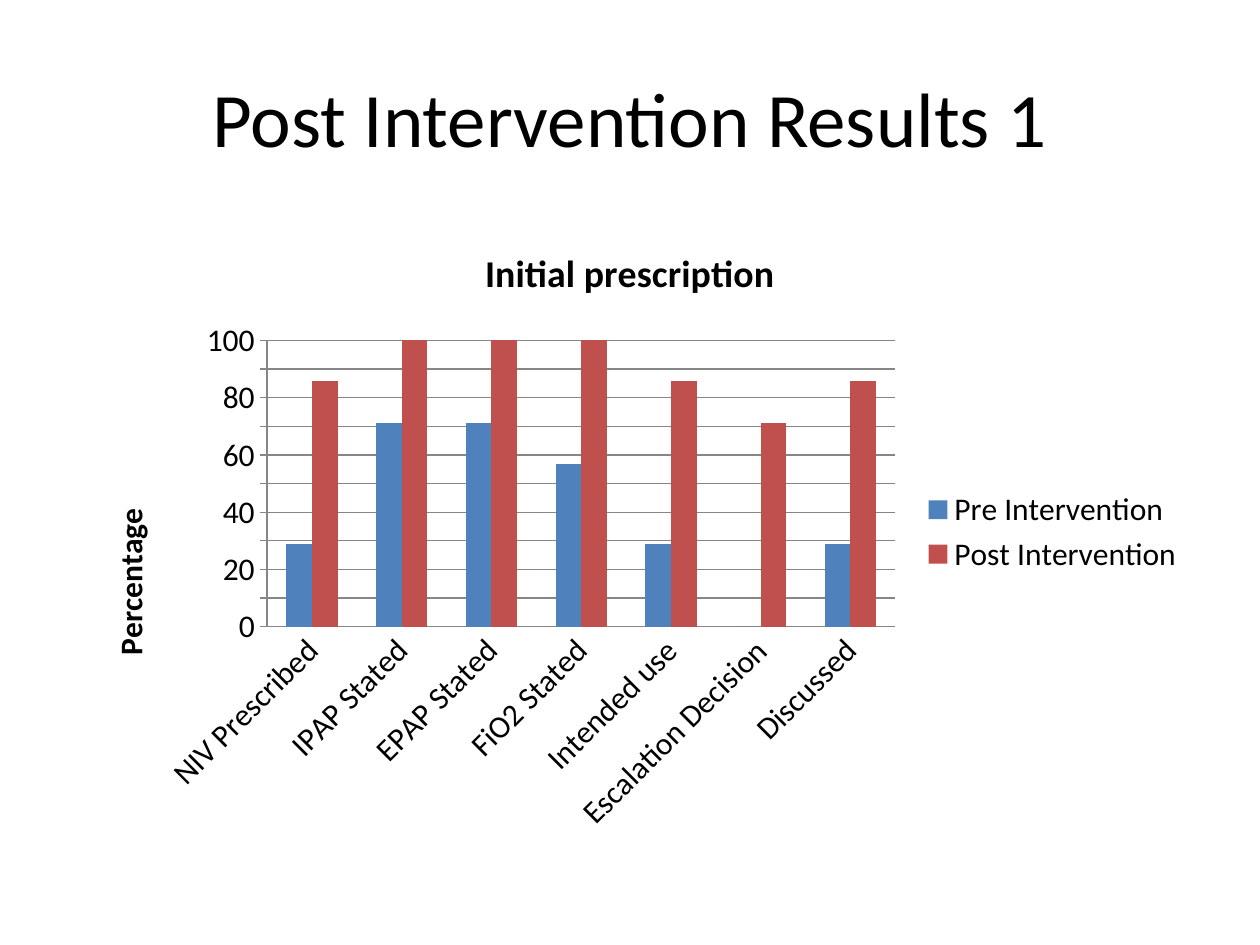
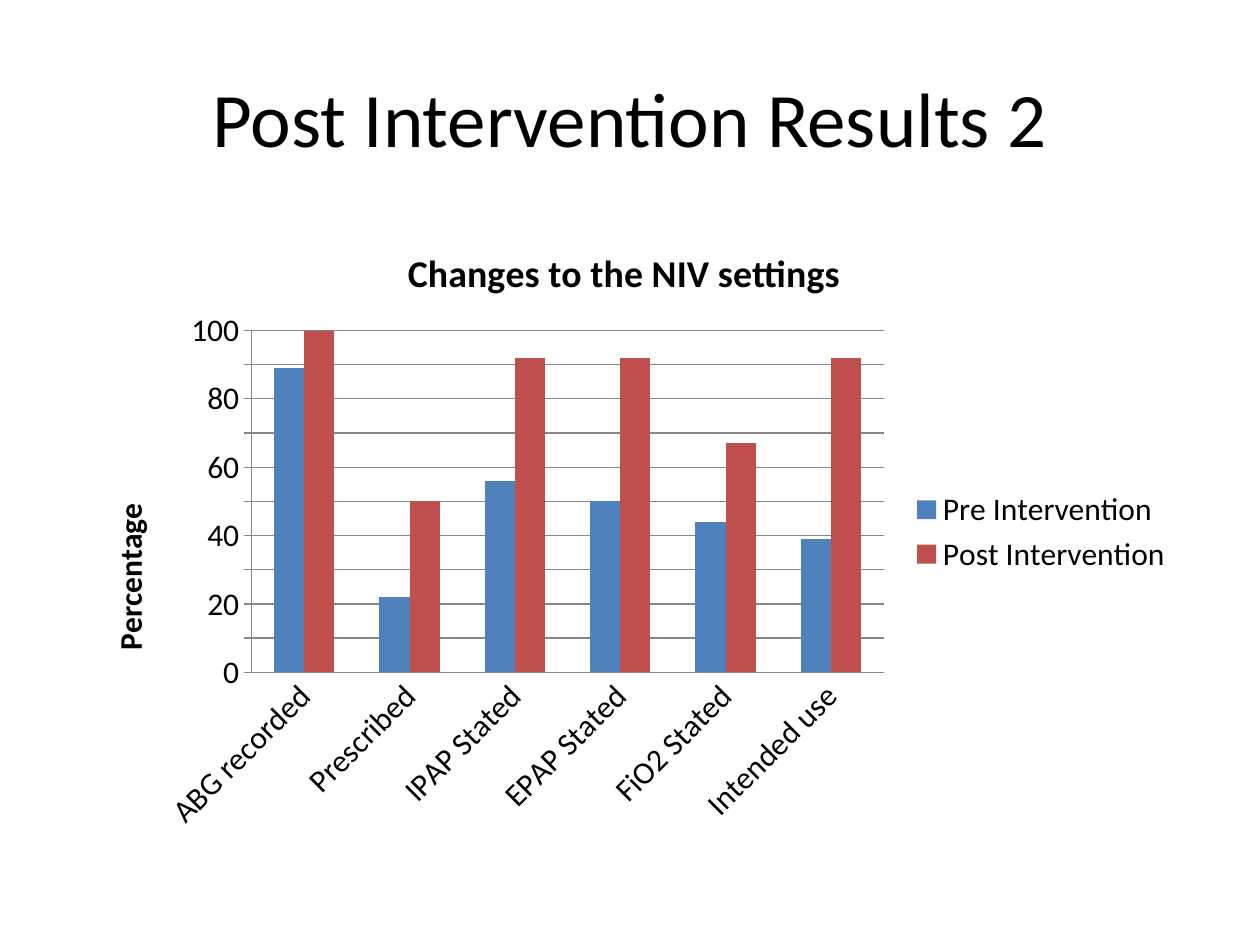
from dataclasses import dataclass

from lxml import etree
from pptx import Presentation
from pptx.chart.data import CategoryChartData
from pptx.dml.color import RGBColor
from pptx.enum.chart import XL_CHART_TYPE, XL_LEGEND_POSITION, XL_TICK_MARK
from pptx.enum.text import MSO_ANCHOR, PP_ALIGN
from pptx.oxml.ns import qn
from pptx.util import Inches, Pt

COLUMNS = XL_CHART_TYPE.COLUMN_CLUSTERED
RIGHT = XL_LEGEND_POSITION.RIGHT
NO_TICK, CROSS_TICK = XL_TICK_MARK.NONE, XL_TICK_MARK.CROSS
MIDDLE, CENTER = MSO_ANCHOR.MIDDLE, PP_ALIGN.CENTER
BLANK = 6


@dataclass(frozen=True)
class Theme:
    """Colours, font and type sizes of the deck."""
    font: str = "Calibri"
    ink: RGBColor = RGBColor(0x00, 0x00, 0x00)
    line: RGBColor = RGBColor(0x86, 0x86, 0x86)
    pre: RGBColor = RGBColor(0x4F, 0x81, 0xBD)
    post: RGBColor = RGBColor(0xC0, 0x50, 0x4D)
    title: float = 44
    chart_title: float = 21.6
    body: float = 18


THEME = Theme()
WIDTH, HEIGHT = Inches(10), Inches(7.5)
MARGIN = 0.05
TITLE_BOX = (MARGIN, 0.04, 0.9, 0.167)
CHART_TOP, CHART_HEIGHT = 0.233, 0.66

RESULTS = [
    dict(title="Post Intervention Results 1",
         chart_title="Initial prescription",
         cats=["NIV Prescribed", "IPAP Stated", "EPAP Stated", "FiO2 Stated",
               "Intended use", "Escalation Decision", "Discussed"],
         pre=[29, 71, 71, 57, 29, 0, 29],
         post=[86, 100, 100, 100, 86, 71, 86],
         width=0.9, plot=(0.18, 0.193, 0.554, 0.459), label=(0.035, 0.453)),
    dict(title="Post Intervention Results 2",
         chart_title="Changes to the NIV settings",
         cats=["ABG recorded", "Prescribed", "IPAP Stated", "EPAP Stated",
               "FiO2 Stated", "Intended use"],
         pre=[89, 22, 56, 50, 44, 39],
         post=[100, 50, 92, 92, 67, 92],
         width=0.891, plot=(0.168, 0.177, 0.563, 0.548), label=(0.035, 0.445)),
]


def place(box):
    """Turn shares of the slide into lengths."""
    return [round(share * side) for share, side in zip(box, (WIDTH, HEIGHT) * 2)]


def style(font, size, bold=False):
    """Apply the deck's typeface and ink."""
    font.name, font.size, font.bold = THEME.font, Pt(size), bold
    font.color.rgb = THEME.ink


def set_layout(parent, index, box, inner=False):
    """Fix a chart part at shares of the chart's size."""
    for old in parent.findall(qn("c:layout")):
        parent.remove(old)
    layout = etree.Element(qn("c:layout"))
    manual = etree.SubElement(layout, qn("c:manualLayout"))
    rules = [("layoutTarget", "inner")] if inner else []
    rules += [("xMode", "edge"), ("yMode", "edge"), *zip("xywh", box)]
    for tag, val in rules:
        etree.SubElement(manual, qn(f"c:{tag}"), val=str(val))
    parent.insert(index, layout)


def add_heading(title_text, shape):
    """Write a bold heading into a chart or axis title."""
    size, text = title_text
    tf = shape.text_frame
    tf.text = text
    style(tf.paragraphs[0].font, size, True)


def add_title(slide, text, box):
    """Add the centred slide title."""
    tf = slide.shapes.add_textbox(*place(box)).text_frame
    tf.word_wrap, tf.vertical_anchor = True, MIDDLE
    p = tf.paragraphs[0]
    p.text, p.alignment = text, CENTER
    style(p.font, THEME.title)


def style_axes(chart, label):
    """Format both axes, the gridlines and the value title."""
    cat, val = chart.category_axis, chart.value_axis
    cat.major_tick_mark, val.major_tick_mark = NO_TICK, CROSS_TICK
    val.minimum_scale, val.maximum_scale, val.major_unit = 0, 100, 10
    val.has_major_gridlines = True
    for part in (cat, val, val.major_gridlines):
        part.format.line.color.rgb = THEME.line
        part.format.line.width = Pt(0.75)
    for axis in (cat, val):
        style(axis.tick_labels.font, THEME.body)
    cat._element.find(qn("c:txPr")).find(qn("a:bodyPr")).set("rot", "-2700000")
    add_heading((THEME.body, "Percentage"), val.axis_title)
    title = val._element.find(qn("c:title"))
    body = next(title.iter(qn("a:bodyPr")))
    body.set("rot", "-5400000")
    body.set("vert", "horz")
    set_layout(title, 1, label)


def add_results_chart(slide, result, box):
    """Add the pre and post intervention column chart."""
    data = CategoryChartData()
    data.categories = result["cats"]
    data.add_series("Pre Intervention", result["pre"])
    data.add_series("Post Intervention", result["post"])
    chart = slide.shapes.add_chart(COLUMNS, *place(box), data).chart
    style(chart.font, THEME.body)
    chart.has_title = chart.has_legend = True
    add_heading((THEME.chart_title, result["chart_title"]), chart.chart_title)
    chart.legend.position, chart.legend.include_in_layout = RIGHT, False
    style(chart.legend.font, THEME.body)
    plot = chart.plots[0]
    plot.vary_by_categories, plot.gap_width, plot.overlap = False, 150, 0
    for series, color in zip(plot.series, (THEME.pre, THEME.post)):
        series.format.fill.solid()
        series.format.fill.fore_color.rgb = color
    style_axes(chart, result["label"])
    area = next(chart._chartSpace.iter(qn("c:plotArea")))
    set_layout(area, 0, result["plot"], inner=True)


def add_results_slide(prs, result):
    """Add one slide with a title above a chart."""
    slide = prs.slides.add_slide(prs.slide_layouts[BLANK])
    add_title(slide, result["title"], TITLE_BOX)
    add_results_chart(slide, result,
                      (MARGIN, CHART_TOP, result["width"], CHART_HEIGHT))


def main():
    """Build and save the deck."""
    prs = Presentation()
    prs.slide_width, prs.slide_height = WIDTH, HEIGHT
    for result in RESULTS:
        add_results_slide(prs, result)
    prs.save("out.pptx")


if __name__ == "__main__":
    main()
